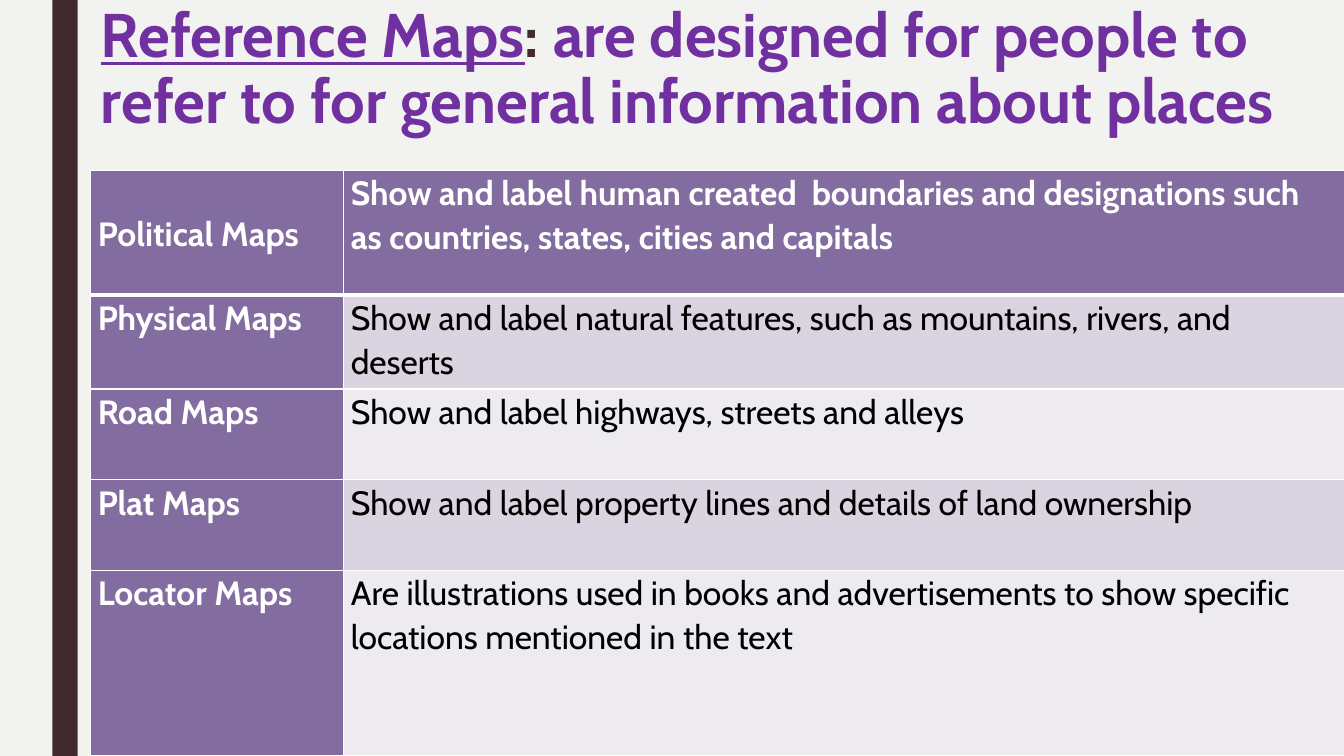
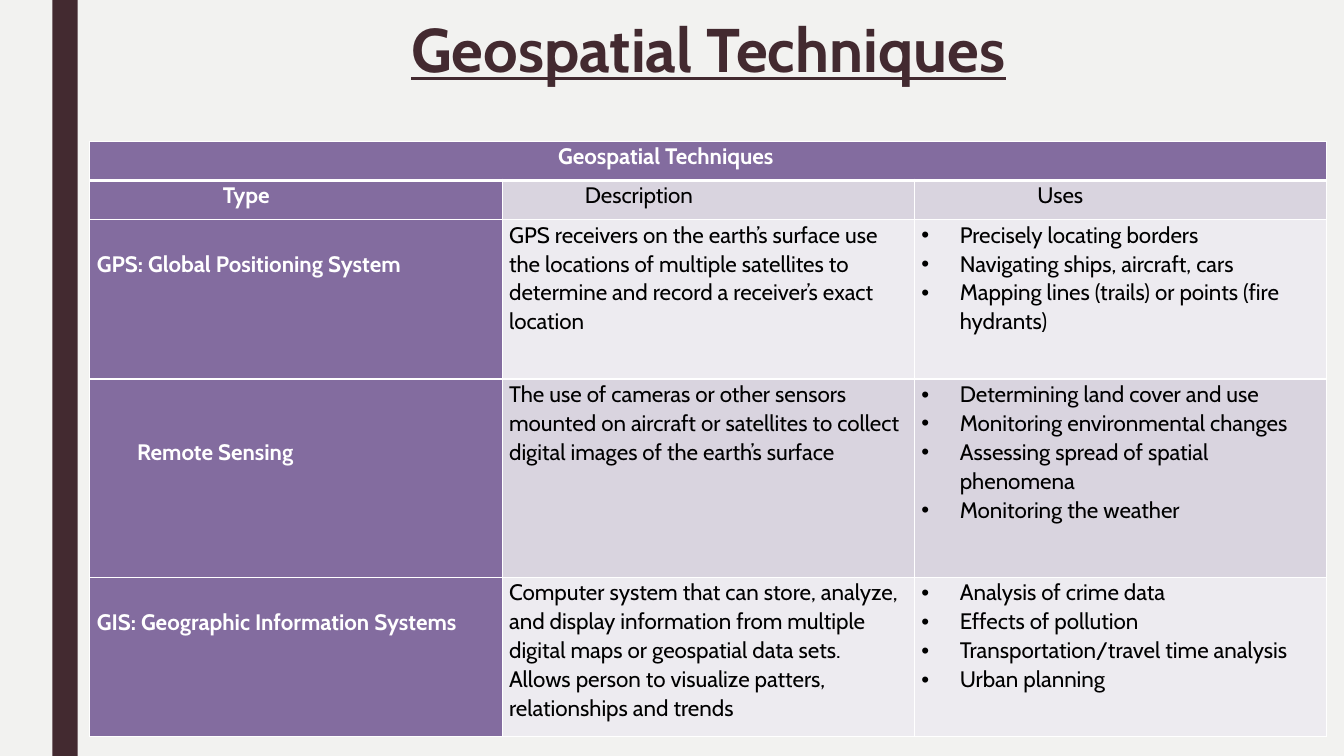
from dataclasses import dataclass

import pptx
import pptx.dml.color
import pptx.enum.shapes
import pptx.enum.text
import pptx.oxml
import pptx.oxml.ns
import pptx.util

SCALE = 9144
WIDE, HIGH = 1333, 750
FONT = "Cabin"
HANG = 38
HUES = {
    "page": "F2F2F0",
    "bar": "432A30",
    "title": "7030A0",
    "head": "836C9F",
    "band": "D9D4DF",
    "pale": "EDEBF0",
    "white": "FFFFFF",
    "black": "000000",
}


@dataclass(frozen=True)
class Box:
    left: int
    top: int
    width: int
    height: int


@dataclass(frozen=True)
class Run:
    text: str
    hue: str
    under: bool = False


@dataclass(frozen=True)
class Cell:
    lines: tuple[str, ...]
    drop: int = 0
    inset: int = 0
    trim: int = 0
    mid: bool = False
    dots: bool = False


@dataclass(frozen=True)
class Grid:
    left: int
    top: int
    cols: tuple[int, ...]
    rows: tuple[int, ...]
    size: int
    cells: tuple[tuple[Cell, ...], ...]


@dataclass(frozen=True)
class Page:
    box: Box
    runs: tuple[Run, ...]
    grid: Grid
    inset: int = 0


def px(count: int) -> pptx.util.Emu:
    return pptx.util.Emu(count * SCALE)


def tint(name: str) -> pptx.dml.color.RGBColor:
    return pptx.dml.color.RGBColor.from_string(HUES[name])


def paint(fill, hue: str) -> None:
    fill.solid()
    fill.fore_color.rgb = tint(hue)


def cell(text: str, drop: int = 0, inset: int = 0) -> Cell:
    return Cell((text,), drop, inset)


def dots(*lines: str) -> Cell:
    return Cell(lines, dots=True)


def draw_bar(slide) -> None:
    bar = slide.shapes.add_shape(
        pptx.enum.shapes.MSO_SHAPE.RECTANGLE, px(52), px(0), px(25), px(HIGH)
    )
    bar.shadow.inherit = False
    paint(bar.fill, "bar")
    bar.line.fill.background()


def draw_title(slide, page: Page) -> None:
    title = slide.shapes.title
    box = page.box
    title.left, title.top = px(box.left), px(box.top)
    title.width, title.height = px(box.width), px(box.height)
    frame = title.text_frame
    frame.word_wrap = True
    frame.auto_size = pptx.enum.text.MSO_AUTO_SIZE.NONE
    frame.vertical_anchor = pptx.enum.text.MSO_ANCHOR.TOP
    frame.margin_left = px(10 + page.inset)
    para = frame.paragraphs[0]
    para.alignment = pptx.enum.text.PP_ALIGN.LEFT
    para.line_spacing = 0.89
    para.font.name = FONT
    para.font.size = pptx.util.Pt(44)
    para.font.bold = True
    for part in page.runs:
        run = para.add_run()
        run.text = part.text
        run.font.color.rgb = tint(part.hue)
        run.font.underline = part.under


def draw_edge(box, side: str, width: int) -> None:
    space = pptx.oxml.ns.nsdecls("a")
    edge = pptx.oxml.parse_xml(
        f'<a:ln{side} {space} w="{pptx.util.Pt(width)}"><a:solidFill>'
        f'<a:srgbClr val="{HUES["white"]}"/></a:solidFill></a:ln{side}>'
    )
    box._tc.get_or_add_tcPr().append(edge)


def add_dot(para) -> None:
    props = para._p.get_or_add_pPr()
    props.set("marL", str(px(HANG)))
    props.set("indent", str(px(-HANG)))
    space = pptx.oxml.ns.nsdecls("a")
    for mark in ('buFont {} typeface="Arial"', 'buChar {} char="•"'):
        props.append(pptx.oxml.parse_xml(f"<a:{mark.format(space)}/>"))


def fill_cell(box, data: Cell, size: int, head: bool) -> None:
    box.margin_left, box.margin_right = px(7 + data.inset), px(7 + data.trim)
    box.margin_top, box.margin_bottom = px(data.drop), px(0)
    frame = box.text_frame
    frame.word_wrap = True
    for i, text in enumerate(data.lines):
        para = frame.add_paragraph() if i else frame.paragraphs[0]
        para.text = text
        para.line_spacing = 1.07
        if data.mid:
            para.alignment = pptx.enum.text.PP_ALIGN.CENTER
        if data.dots:
            add_dot(para)
        para.font.name = FONT
        para.font.size = pptx.util.Pt(size)
        para.font.bold = head
        para.font.color.rgb = tint("white" if head else "black")


def draw_grid(slide, grid: Grid) -> None:
    frame = slide.shapes.add_table(
        len(grid.rows), len(grid.cols), px(grid.left), px(grid.top),
        px(sum(grid.cols)), px(sum(grid.rows)),
    )
    table = frame.table
    table.horz_banding = False
    for col, width in zip(table.columns, grid.cols):
        col.width = px(width)
    for row, height in zip(table.rows, grid.rows):
        row.height = px(height)
    for r in range(len(grid.rows)):
        for c in range(len(grid.cols)):
            box = table.cell(r, c)
            head = r == 0 or c == 0
            for side in "LRTB":
                thick = (r, side) in ((0, "B"), (1, "T"))
                draw_edge(box, side, 3 if thick else 1)
            paint(box.fill, "head" if head else "band" if r % 2 else "pale")
            if c < len(grid.cells[r]):
                fill_cell(box, grid.cells[r][c], grid.size, head)
    if len(grid.cells[0]) == 1:
        table.cell(0, 0).merge(table.cell(0, len(grid.cols) - 1))


MAPS = Page(
    Box(90, 0, 1243, 169),
    (
        Run("Reference Maps", "title", True),
        Run(": ", "bar"),
        Run("are designed for people to refer to for general information "
            "about places", "title"),
    ),
    Grid(
        90, 169, (251, 993), (124, 93, 90, 90, 184), 24,
        (
            (cell("Political Maps", drop=41),
             cell("Show and label human created  boundaries and designations "
                  "such as countries, states, cities and capitals")),
            (cell("Physical Maps"),
             cell("Show and label natural features, such as mountains, "
                  "rivers, and deserts")),
            (cell("Road Maps"),
             cell("Show and label highways, streets and alleys")),
            (cell("Plat Maps"),
             cell("Show and label property lines and details of land "
                  "ownership")),
            (cell("Locator Maps"),
             cell("Are illustrations used in books and advertisements to "
                  "show specific locations mentioned in the text")),
        ),
    ),
)

TECHS = Page(
    Box(150, 15, 1050, 102),
    (Run("Geospatial Techniques", "bar", True),),
    Grid(
        89, 140, (409, 409, 409), (39, 39, 158, 197, 158), 16,
        (
            (Cell(("Geospatial Techniques",), trim=84, mid=True),),
            (cell("Type", inset=125), cell("Description", inset=75),
             cell("Uses", inset=115)),
            (cell("GPS: Global Positioning System", drop=29),
             cell("GPS receivers on the earth’s surface use the locations of "
                  "multiple satellites to determine and record a receiver’s "
                  "exact location"),
             dots("Precisely locating borders",
                  "Navigating ships, aircraft, cars",
                  "Mapping lines (trails) or points (fire hydrants)")),
            (cell("Remote Sensing", drop=58, inset=40),
             cell("The use of cameras or other sensors mounted on aircraft "
                  "or satellites to collect digital images of the earth’s "
                  "surface"),
             dots("Determining land cover and use",
                  "Monitoring environmental changes",
                  "Assessing spread of spatial phenomena",
                  "Monitoring the weather")),
            (cell("GIS: Geographic Information Systems", drop=29),
             cell("Computer system that can store, analyze, and display "
                  "information from multiple digital maps or geospatial data "
                  "sets. Allows person to visualize patters, relationships "
                  "and trends"),
             dots("Analysis of crime data",
                  "Effects of pollution",
                  "Transportation/travel time analysis",
                  "Urban planning")),
        ),
    ),
    inset=248,
)


def main() -> None:
    deck = pptx.Presentation()
    deck.slide_width, deck.slide_height = px(WIDE), px(HIGH)
    paint(deck.slide_master.background.fill, "page")
    plain = deck.slide_layouts.get_by_name("Title Only")
    for page in (MAPS, TECHS):
        slide = deck.slides.add_slide(plain)
        draw_bar(slide)
        draw_title(slide, page)
        draw_grid(slide, page.grid)
    deck.save("out.pptx")


if __name__ == "__main__":
    main()
